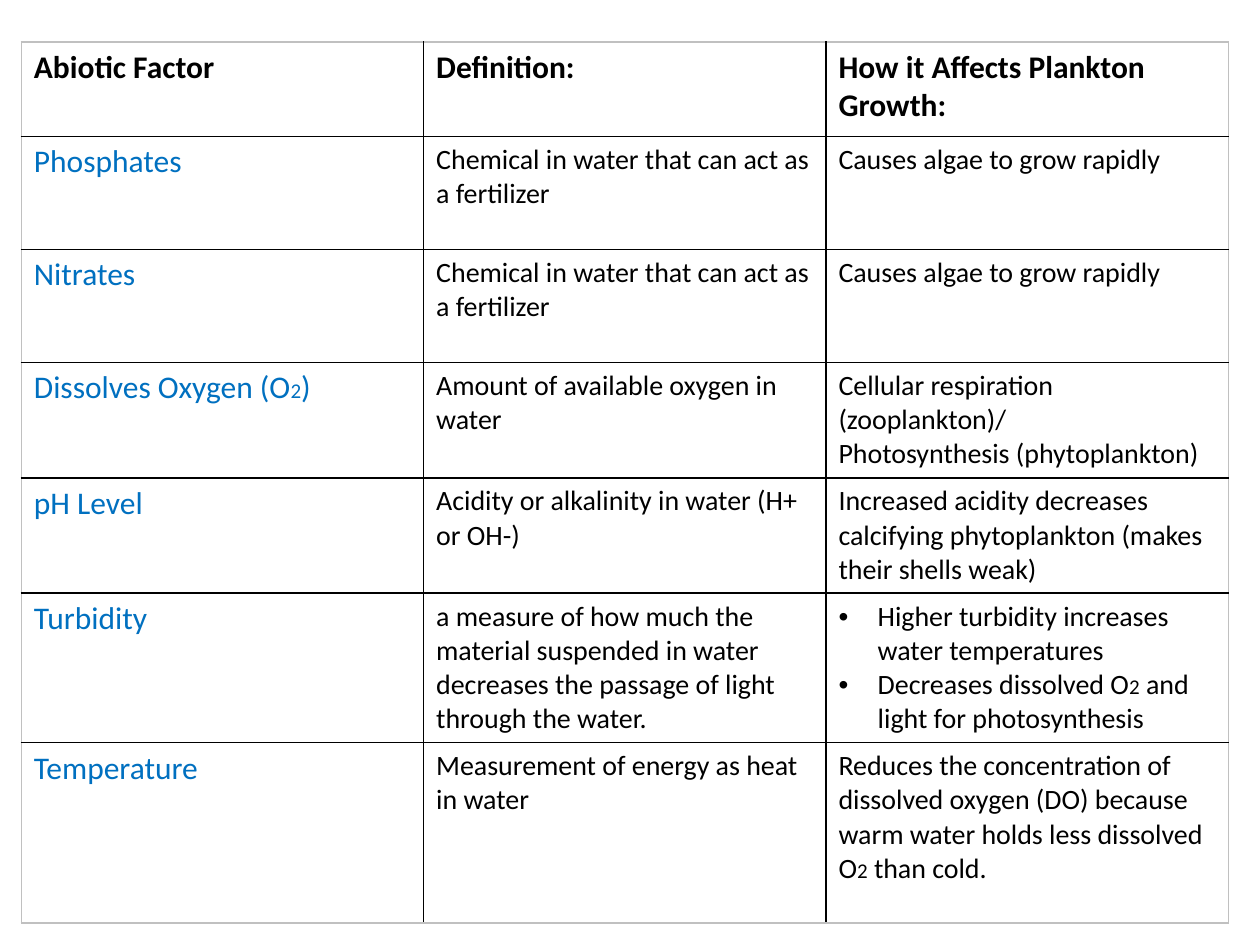
from dataclasses import dataclass

from lxml.etree import SubElement
from pptx import Presentation
from pptx.dml.color import RGBColor
from pptx.oxml.ns import qn
from pptx.util import Cm, Pt

FONT = "Calibri"
BLACK, BLUE, GREY, WHITE = "000000", "0070C0", "C0C0C0", "FFFFFF"


@dataclass
class Style:
    size: int
    color: str = BLACK
    bold: bool = False


@dataclass
class Factor:
    name: str
    meaning: str
    effects: list[str]
    height: float
    bullets: bool = False


HEAD = Style(18, bold=True)
NAME = Style(18, BLUE)
BODY = Style(16)
HEADS = ["Abiotic Factor", "Definition:", "How it Affects Plankton Growth:"]
HEAD_HEIGHT = 1.9
COL_WIDTH = 8.11
FERTILIZER = "Chemical in water that can act as a fertilizer"
ALGAE = "Causes algae to grow rapidly"

FACTORS = [
    Factor("Phosphates", FERTILIZER, [ALGAE], 2.28),
    Factor("Nitrates", FERTILIZER, [ALGAE], 2.28),
    Factor("Dissolves Oxygen (O2)", "Amount of available oxygen in water",
           ["Cellular respiration (zooplankton)/",
            "Photosynthesis (phytoplankton)"], 2.28),
    Factor("pH Level", "Acidity or alkalinity in water (H+ or OH-)",
           ["Increased acidity decreases calcifying phytoplankton "
            "(makes their shells weak)"], 2.28),
    Factor("Turbidity",
           "a measure of how much the material suspended in water "
           "decreases the passage of light through the water.",
           ["Higher turbidity increases water temperatures",
            "Decreases dissolved O2 and light for photosynthesis"],
           2.97, bullets=True),
    Factor("Temperature", "Measurement of energy as heat in water",
           ["Reduces the concentration of dissolved oxygen (DO) because "
            "warm water holds less dissolved O2 than cold."], 3.63),
]


def rgb(code: str) -> RGBColor:
    return RGBColor.from_string(code)


def add_bullet(para) -> None:
    props = para._p.get_or_add_pPr()
    props.set("marL", str(Cm(0.79)))
    props.set("indent", str(-Cm(0.79)))
    SubElement(props, qn("a:buFont"), typeface="Arial")
    SubElement(props, qn("a:buChar"), char="•")


def write(para, text: str, style: Style) -> None:
    """Fill a paragraph, setting the 2 of each O2 in small type."""
    head, oxygen, tail = text.partition("O2")
    parts = [head + "O", "2", tail] if oxygen else [text]
    for part in parts:
        run = para.add_run()
        run.text = part
        font = run.font
        font.name, font.bold = FONT, style.bold
        font.size = Pt(12 if part == "2" else style.size)
        font.color.rgb = rgb(style.color)


def fill_cell(cell, lines: list[str], style: Style, bullets: bool = False) -> None:
    frame = cell.text_frame
    for i, line in enumerate(lines):
        para = frame.add_paragraph() if i else frame.paragraphs[0]
        if bullets:
            add_bullet(para)
        write(para, line, style)


def rule_cell(cell, outer: dict[str, bool]) -> None:
    """Draw grey rules on the table's edge and black ones inside."""
    props = cell._tc.get_or_add_tcPr()
    for side, edge in outer.items():
        line = SubElement(props, qn(f"a:ln{side}"), w=str(Pt(1)))
        fill = SubElement(line, qn("a:solidFill"))
        SubElement(fill, qn("a:srgbClr"), val=GREY if edge else BLACK)
    cell.fill.solid()
    cell.fill.fore_color.rgb = rgb(WHITE)


def main() -> None:
    deck = Presentation()
    deck.slide_width, deck.slide_height = Cm(25.4), Cm(19.05)
    slide = deck.slides.add_slide(deck.slide_layouts[6])

    heights = [HEAD_HEIGHT] + [factor.height for factor in FACTORS]
    rows, cols = len(heights), len(HEADS)
    table = slide.shapes.add_table(rows, cols, Cm(0.43), Cm(0.85),
                                   Cm(COL_WIDTH * cols), Cm(sum(heights))).table
    for col in table.columns:
        col.width = Cm(COL_WIDTH)
    for row, height in zip(table.rows, heights):
        row.height = Cm(height)

    for c, head in enumerate(HEADS):
        fill_cell(table.cell(0, c), [head], HEAD)
    for r, factor in enumerate(FACTORS, 1):
        fill_cell(table.cell(r, 0), [factor.name], NAME)
        fill_cell(table.cell(r, 1), [factor.meaning], BODY)
        fill_cell(table.cell(r, 2), factor.effects, BODY, factor.bullets)

    for r in range(rows):
        for c in range(cols):
            rule_cell(table.cell(r, c), {"L": c == 0, "R": c == cols - 1,
                                         "T": r == 0, "B": r == rows - 1})
    deck.save("out.pptx")


if __name__ == "__main__":
    main()
